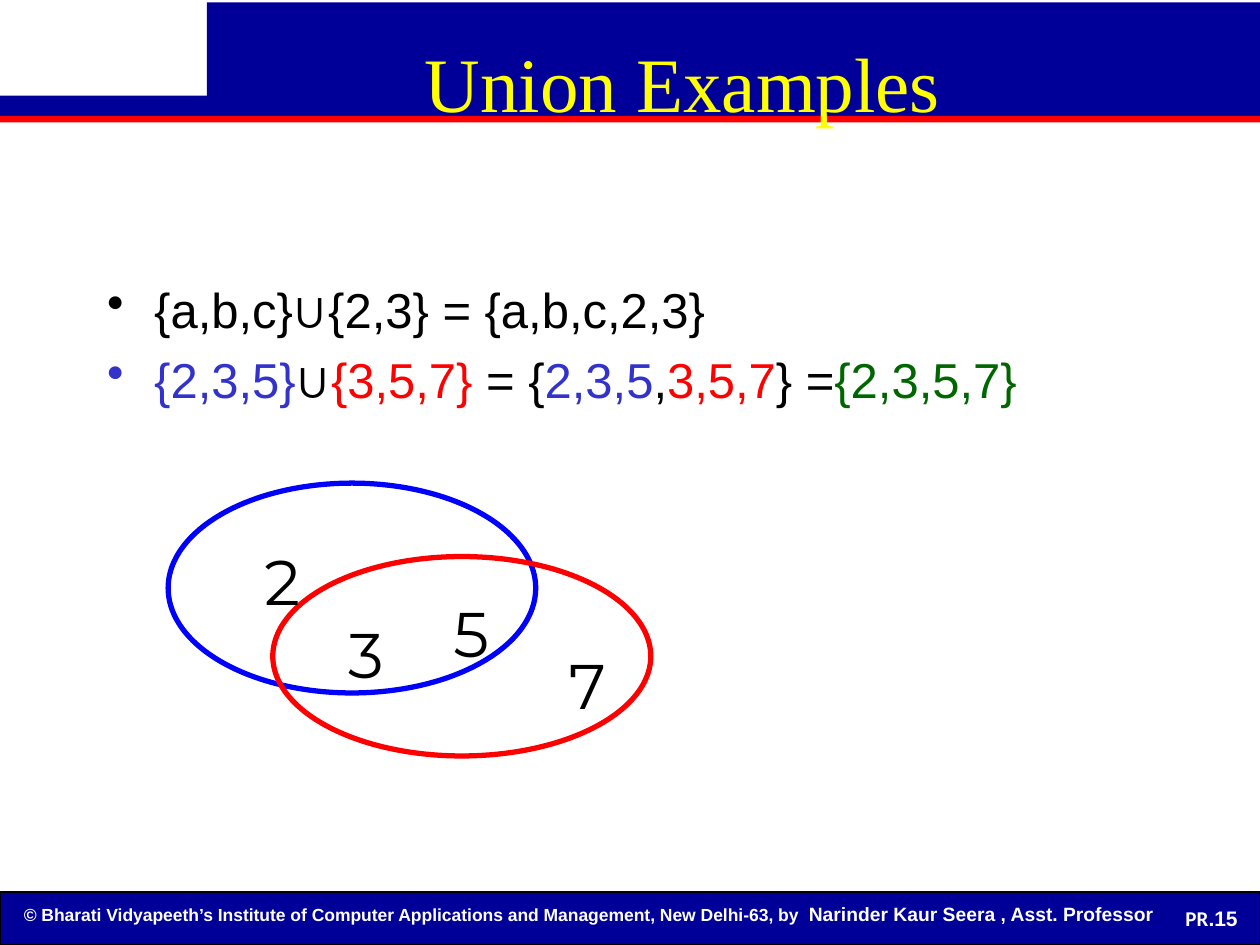
from lxml.etree import SubElement
from pptx import Presentation
from pptx.dml.color import RGBColor as Color
from pptx.enum.shapes import MSO_SHAPE as Shape
from pptx.enum.text import MSO_ANCHOR as Anchor, PP_ALIGN as Align
from pptx.oxml import parse_xml
from pptx.oxml.ns import nsdecls, qn
from pptx.util import Cm, Pt

NAVY = Color(0x00, 0x00, 0x99)
RED = Color(0xFF, 0x00, 0x00)
BLUE = Color(0x00, 0x00, 0xFF)
INDIGO = Color(0x33, 0x33, 0xCC)
GREEN = Color(0x00, 0x66, 0x00)
YELLOW = Color(0xFF, 0xFF, 0x00)
BLACK = Color(0x00, 0x00, 0x00)
WHITE = Color(0xFF, 0xFF, 0xFF)

BANDS = [
    ((0, 1.93, 25.4, 0.41), NAVY, None),
    ((0, 2.34, 25.4, 0.13), RED, None),
    ((4.17, 0.05, 21.23, 1.93), NAVY, None),
    ((0, 17.98, 25.4, 1.07), NAVY, BLACK),
]
EXAMPLES = [
    [("{a,b,c}∪{2,3} = {a,b,c,2,3}", {})],
    [
        ("{2,3,5}", {"color": INDIGO}),
        ("∪", {}),
        ("{3,5,7}", {"color": RED}),
        (" = {", {}),
        ("2,3,5", {"color": INDIGO}),
        (",", {}),
        ("3,5,7", {"color": RED}),
        ("} =", {}),
        ("{2,3,5,7}", {"color": GREEN}),
    ],
]
SETS = [((3.39, 9.74, 7.41, 4.23), BLUE), ((5.5, 11.22, 7.62, 4.02), RED)]
MEMBERS = [("2", 5.08, 10.8), ("3", 6.77, 12.28), ("5", 8.89, 11.85), ("7", 11.22, 12.91)]


def add_figure(shapes, kind, frame, fill=None, line=None, width=0.75):
    figure = shapes.add_shape(kind, *map(Cm, frame))
    figure.shadow.inherit = False
    if fill is None:
        figure.fill.background()
    else:
        figure.fill.solid()
        figure.fill.fore_color.rgb = fill
    if line is None:
        figure.line.fill.background()
    else:
        figure.line.color.rgb = line
        figure.line.width = Pt(width)


def add_bullet(para):
    properties = para._p.get_or_add_pPr()
    properties.set("marL", str(Cm(0.95)))
    properties.set("indent", str(-Cm(0.95)))
    SubElement(properties, qn("a:buChar")).set("char", "•")


def outline_span(span):
    outline = parse_xml(
        f'<a:ln {nsdecls("a")} w="{Pt(0.75)}"><a:solidFill>'
        f'<a:srgbClr val="{BLACK}"/></a:solidFill></a:ln>'
    )
    span._r.get_or_add_rPr().insert(0, outline)


def add_text(shapes, frame, lines, size=28, font="Arial", color=BLACK, bold=False,
             align=Align.LEFT, anchor=Anchor.TOP, wrap=True, bullet=False,
             outline=False, gap=0, top=0.13):
    box = shapes.add_textbox(*map(Cm, frame)).text_frame
    box.word_wrap = wrap
    box.vertical_anchor = anchor
    box.margin_top = Cm(top)
    for index, spans in enumerate(lines):
        para = box.add_paragraph() if index else box.paragraphs[0]
        para.alignment = align
        if bullet:
            add_bullet(para)
        if index:
            para.space_before = Pt(gap)
        for text, style in spans:
            span = para.add_run()
            span.text = text
            span.font.size = Pt(style.get("size", size))
            span.font.name = style.get("font", font)
            span.font.bold = bold
            span.font.color.rgb = style.get("color", color)
            if outline:
                outline_span(span)


def add_footer(shapes):
    credit = [
        ("© Bharati Vidyapeeth’s Institute of Computer Applications and Management, "
         "New Delhi-63, by", {}),
        ("  Narinder Kaur Seera , Asst. Professor", {"size": 11}),
    ]
    add_text(shapes, (0.23, 18.06, 23.32, 0.71), [credit], size=10, color=WHITE, bold=True)
    number = [("PR", {"font": "Calibri"}), (".15", {})]
    add_text(shapes, (23.55, 18.16, 1.75, 0.71), [number], size=12, color=WHITE,
             bold=True, align=Align.CENTER, anchor=Anchor.MIDDLE)


def add_venn(page):
    shapes = page.shapes.add_group_shape().shapes
    for frame, color in SETS:
        add_figure(shapes, Shape.OVAL, frame, line=color, width=3)
    for digit, left, top in MEMBERS:
        add_text(shapes, (left, top, 0.64, 1.07), [[(digit, {})]], size=36,
                 font="Montserrat", align=Align.CENTER, wrap=False, outline=True)


def main():
    deck = Presentation()
    deck.slide_width, deck.slide_height = Cm(25.4), Cm(19.05)
    page = deck.slides.add_slide(deck.slide_layouts[6])
    for frame, fill, line in BANDS:
        add_figure(page.shapes, Shape.RECTANGLE, frame, fill, line)
    add_footer(page.shapes)
    add_text(page.shapes, (1.91, 5.51, 21.59, 11.43), EXAMPLES, bullet=True, gap=6.5)
    add_venn(page)
    add_text(page.shapes, (2.97, 0.43, 21.59, 3.18), [[("Union Examples", {})]], size=44,
             font="Times New Roman", color=YELLOW, align=Align.CENTER, top=0.29)
    deck.save("out.pptx")


if __name__ == "__main__":
    main()
